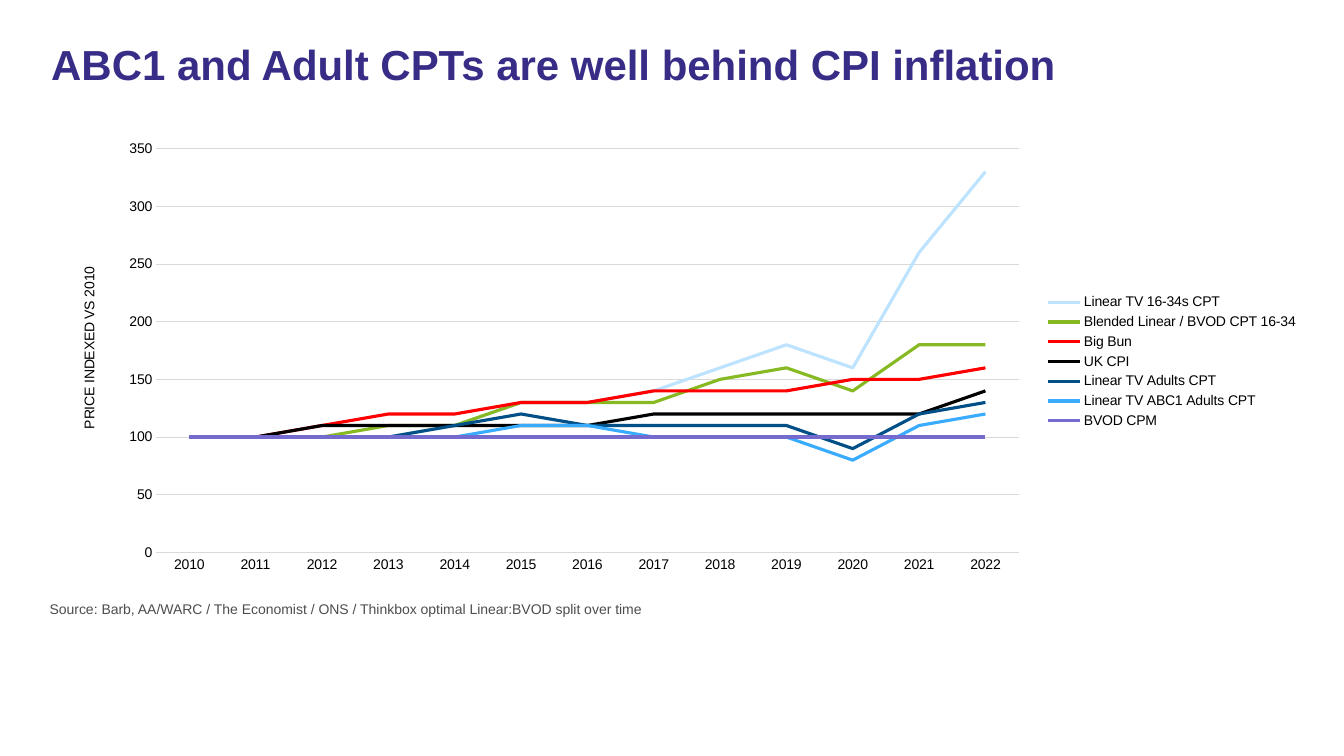
"""Build the slide comparing TV advertising prices with inflation since 2010."""
import pptx
import pptx.chart.data
import pptx.dml.color
import pptx.enum.chart
import pptx.enum.text
import pptx.oxml
import pptx.oxml.ns
import pptx.util
from pptx.util import Cm, Pt

FONT = "Arial"
HUES = {
    "title": "372D87", "source": "4D4D4D", "text": "000000", "grid": "D9D9D9",
    "young": "BDE3FF", "blend": "87B923", "burger": "FF0000", "prices": "000000",
    "adults": "004F87", "upper": "39ACFF", "online": "756BCE",
}
YEARS = [str(year) for year in range(2010, 2023)]
LINES = [
    ("Linear TV 16-34s CPT", "young",
     [100, 100, 100, 100, 110, 130, 130, 140, 160, 180, 160, 260, 330]),
    ("Blended Linear / BVOD CPT 16-34", "blend",
     [100, 100, 100, 110, 110, 130, 130, 130, 150, 160, 140, 180, 180]),
    ("Big Bun", "burger",
     [100, 100, 110, 120, 120, 130, 130, 140, 140, 140, 150, 150, 160]),
    ("UK CPI", "prices",
     [100, 100, 110, 110, 110, 110, 110, 120, 120, 120, 120, 120, 140]),
    ("Linear TV Adults CPT", "adults",
     [100, 100, 100, 100, 110, 120, 110, 110, 110, 110, 90, 120, 130]),
    ("Linear TV ABC1 Adults CPT", "upper",
     [100, 100, 100, 100, 100, 110, 110, 100, 100, 100, 80, 110, 120]),
    ("BVOD CPM", "online", [100] * len(YEARS)),
]


def tint(hue):
    """Return the named colour."""
    return pptx.dml.color.RGBColor.from_string(HUES[hue])


def style(font, size, hue, bold=False):
    """Set face, size, colour and weight of a font."""
    font.name, font.size, font.bold = FONT, Pt(size), bold
    font.color.rgb = tint(hue)


def stroke(line, hue, width):
    """Set colour and width of a line."""
    line.color.rgb = tint(hue)
    line.width = Pt(width)


def add_text(slide, text, box, size, hue, bold=False, pitch=None):
    """Add a one-line text box."""
    frame = slide.shapes.add_textbox(*map(Cm, box)).text_frame
    frame.word_wrap = True
    frame.vertical_anchor = pptx.enum.text.MSO_ANCHOR.TOP
    para = frame.paragraphs[0]
    para.line_spacing = pitch
    run = para.add_run()
    run.text = text
    style(run.font, size, hue, bold)


def place(node, index, **spots):
    """Give a chart part a manual layout with shares of the chart size."""
    names = pptx.oxml.ns
    for old in node.findall(names.qn("c:layout")):
        node.remove(old)
    inner = '<c:layoutTarget val="inner"/>' if "w" in spots else ""
    modes = "".join(f'<c:{key}Mode val="edge"/>' for key in "xy")
    sizes = "".join(f'<c:{key} val="{val}"/>' for key, val in spots.items())
    node.insert(index, pptx.oxml.parse_xml(
        f'<c:layout {names.nsdecls("c")}><c:manualLayout>'
        f"{inner}{modes}{sizes}</c:manualLayout></c:layout>"))


def style_axes(chart):
    """Format both axes, the grid and the axis title."""
    kinds = pptx.enum.chart
    years, index = chart.category_axis, chart.value_axis
    for axis in (years, index):
        axis.major_tick_mark = axis.minor_tick_mark = kinds.XL_TICK_MARK.NONE
        style(axis.tick_labels.font, 10, "text")
    stroke(years.format.line, "grid", 0.75)
    index.format.line.fill.background()
    index.minimum_scale, index.maximum_scale, index.major_unit = 0, 350, 50
    index.tick_labels.number_format = "0"
    index.tick_labels.number_format_is_linked = False
    stroke(index.major_gridlines.format.line, "grid", 0.75)
    frame = index.axis_title.text_frame
    run = frame.paragraphs[0].add_run()
    run.text = "PRICE INDEXED VS 2010"
    style(run.font, 10, "text")
    body = frame.paragraphs[0]._p.getparent().find(pptx.oxml.ns.qn("a:bodyPr"))
    body.set("rot", "-5400000")
    body.set("vert", "horz")
    place(index.axis_title._element, 1, x=0.015, y=0.286)


def add_graph(slide):
    """Add the line chart of indexed prices."""
    kinds = pptx.enum.chart
    data = pptx.chart.data.CategoryChartData(number_format="0")
    data.categories = YEARS
    for name, _, vals in LINES:
        data.add_series(name, vals)
    box = map(Cm, (1.48, 3.38, 31.5, 11.46))
    chart = slide.shapes.add_chart(kinds.XL_CHART_TYPE.LINE, *box, data).chart
    style(chart.font, 10, "text")
    chart.has_title = False
    chart.has_legend = True
    chart.legend.position = kinds.XL_LEGEND_POSITION.RIGHT
    chart.legend.include_in_layout = False
    style(chart.legend.font, 10, "text")
    style_axes(chart)
    plot = chart.plots[0]
    plot.vary_by_categories = False
    for series, (_, hue, _) in zip(plot.series, LINES):
        series.smooth = False
        series.marker.style = kinds.XL_MARKER_STYLE.NONE
        stroke(series.format.line, hue, 2.25)
    area = chart._chartSpace.find(".//" + pptx.oxml.ns.qn("c:plotArea"))
    place(area, 0, x=0.078, y=0.032, w=0.69, h=0.888)


def main():
    """Build and save the slide."""
    deck = pptx.Presentation()
    deck.slide_width, deck.slide_height = Cm(33.87), Cm(19.05)
    slide = deck.slides.add_slide(deck.slide_layouts[6])
    add_text(slide, "Source: Barb, AA/WARC / The Economist / ONS / "
             "Thinkbox optimal Linear:BVOD split over time",
             (1, 15.01, 31.5, 0.84), 10, "source")
    add_text(slide, "ABC1 and Adult CPTs are well behind CPI inflation",
             (1.04, 1, 31.5, 2.84), 30, "title", True, 0.9)
    add_graph(slide)
    deck.save("out.pptx")


if __name__ == "__main__":
    main()
